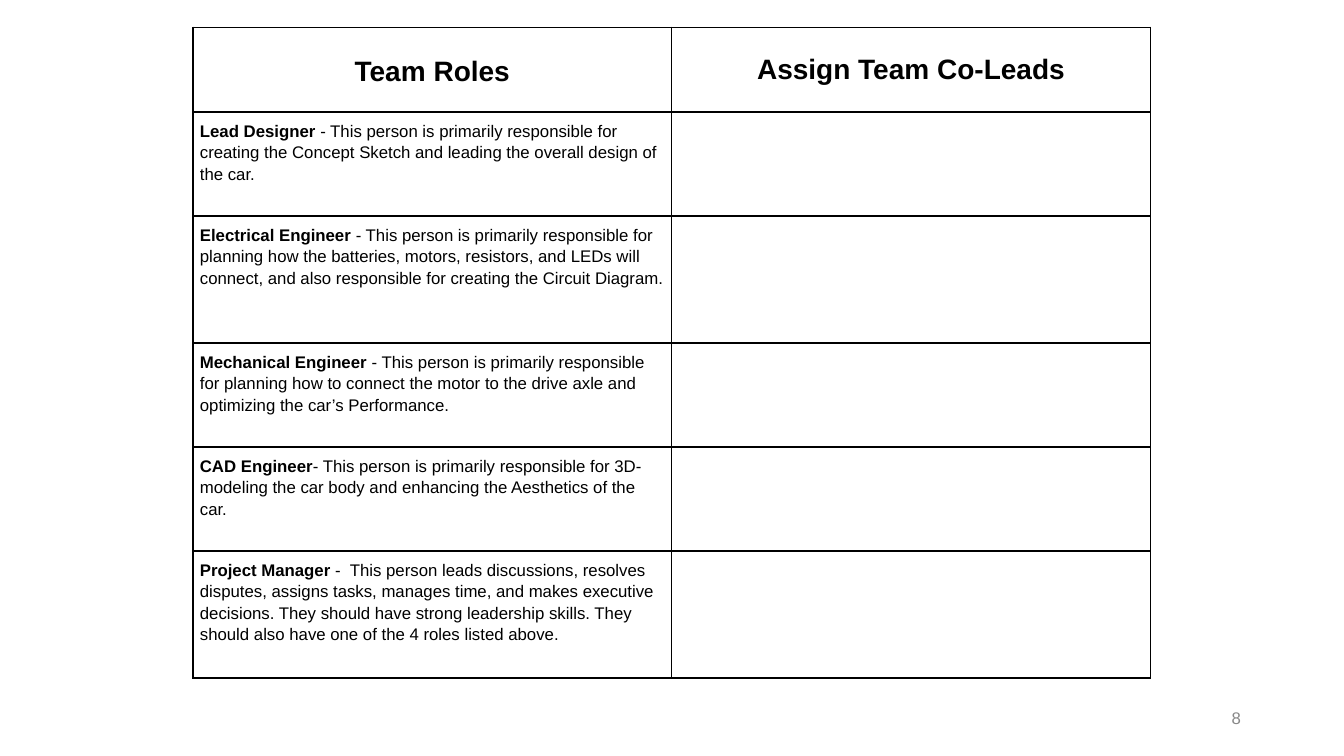
from lxml import etree
from pptx import Presentation
from pptx.dml.color import RGBColor
from pptx.enum.text import MSO_ANCHOR, PP_ALIGN
from pptx.oxml.ns import qn
from pptx.util import Pt

CENTER, RIGHT = PP_ALIGN.CENTER, PP_ALIGN.RIGHT
TOP, MIDDLE = MSO_ANCHOR.TOP, MSO_ANCHOR.MIDDLE

HEADERS = ["Team Roles", "Assign Team Co-Leads"]
ROLES = [
    ("Lead Designer", " - This person is primarily responsible for creating the "
     "Concept Sketch and leading the overall design of the car."),
    ("Electrical Engineer ", "- This person is primarily responsible for planning how "
     "the batteries, motors, resistors, and LEDs will connect, and also responsible "
     "for creating the Circuit Diagram."),
    ("Mechanical Engineer", " - This person is primarily responsible for planning how "
     "to connect the motor to the drive axle and optimizing the car’s Performance."),
    ("CAD Engineer", "- This person is primarily responsible for 3D-modeling the car "
     "body and enhancing the Aesthetics of the car."),
    ("Project Manager", " -  This person leads discussions, resolves disputes, assigns "
     "tasks, manages time, and makes executive decisions. They should have strong "
     "leadership skills. They should also have one of the 4 roles listed above."),
]
PAGE_NUMBER = "8"

THEME = {
    "font": "Arial",
    "ink": RGBColor(0x00, 0x00, 0x00),
    "muted": RGBColor(0x88, 0x88, 0x88),
    "header": Pt(20),
    "body": Pt(12),
    "border": Pt(1),
}

SLIDE_W, SLIDE_H = 960, 540
TABLE_LEFT, TABLE_TOP, COLUMN_W = 137.8, 19.5, 342
HEADER_H, SHORT_H, TALL_H = 60.5, 74.3, 90.7
ROW_HEIGHTS = [HEADER_H, SHORT_H, TALL_H, SHORT_H, SHORT_H, TALL_H]
CELL_MARGIN = Pt(5)


def style(p, size, color, bold=None):
    p.font.name = THEME["font"]
    p.font.size = size
    p.font.color.rgb = color
    p.font.bold = bold


def add_borders(cell):
    tcPr = cell._tc.get_or_add_tcPr()
    for side in ("lnL", "lnR", "lnT", "lnB"):
        ln = etree.SubElement(tcPr, qn(f"a:{side}"), w=str(THEME["border"]))
        fill = etree.SubElement(ln, qn("a:solidFill"))
        etree.SubElement(fill, qn("a:srgbClr"), val=str(THEME["ink"]))


def format_cell(cell, anchor):
    add_borders(cell)
    cell.fill.background()
    cell.margin_left = cell.margin_right = CELL_MARGIN
    cell.margin_top = cell.margin_bottom = CELL_MARGIN
    cell.vertical_anchor = anchor


def add_roles_table(s):
    frame = s.shapes.add_table(
        len(ROW_HEIGHTS), len(HEADERS), Pt(TABLE_LEFT), Pt(TABLE_TOP),
        Pt(COLUMN_W * len(HEADERS)), Pt(sum(ROW_HEIGHTS)))
    table = frame.table
    table.horz_banding = False
    for column in table.columns:
        column.width = Pt(COLUMN_W)
    for i, height in enumerate(ROW_HEIGHTS):
        table.rows[i].height = Pt(height)
        for cell in table.rows[i].cells:
            format_cell(cell, TOP if i else MIDDLE)

    for i, header in enumerate(HEADERS):
        p = table.cell(0, i).text_frame.paragraphs[0]
        p.text = header
        p.alignment = CENTER
        style(p, THEME["header"], THEME["ink"], True)
    table.cell(0, 0).text_frame.paragraphs[0].line_spacing = 1.15

    for i, (role, duty) in enumerate(ROLES, start=1):
        p = table.cell(i, 0).text_frame.paragraphs[0]
        p.line_spacing = 1.15
        style(p, THEME["body"], THEME["ink"])
        for text, bold in ((role, True), (duty, False)):
            r = p.add_run()
            r.text = text
            r.font.bold = bold


def add_page_number(s):
    tf = s.shapes.add_textbox(Pt(859.7), Pt(498.2), Pt(33.8), Pt(28.8)).text_frame
    tf.word_wrap = True
    tf.vertical_anchor = MIDDLE
    p = tf.paragraphs[0]
    p.text = PAGE_NUMBER
    p.alignment = RIGHT
    style(p, THEME["body"], THEME["muted"])


def main():
    prs = Presentation()
    prs.slide_width, prs.slide_height = Pt(SLIDE_W), Pt(SLIDE_H)
    s = prs.slides.add_slide(prs.slide_layouts[6])
    add_page_number(s)
    add_roles_table(s)
    prs.save("out.pptx")


if __name__ == "__main__":
    main()
